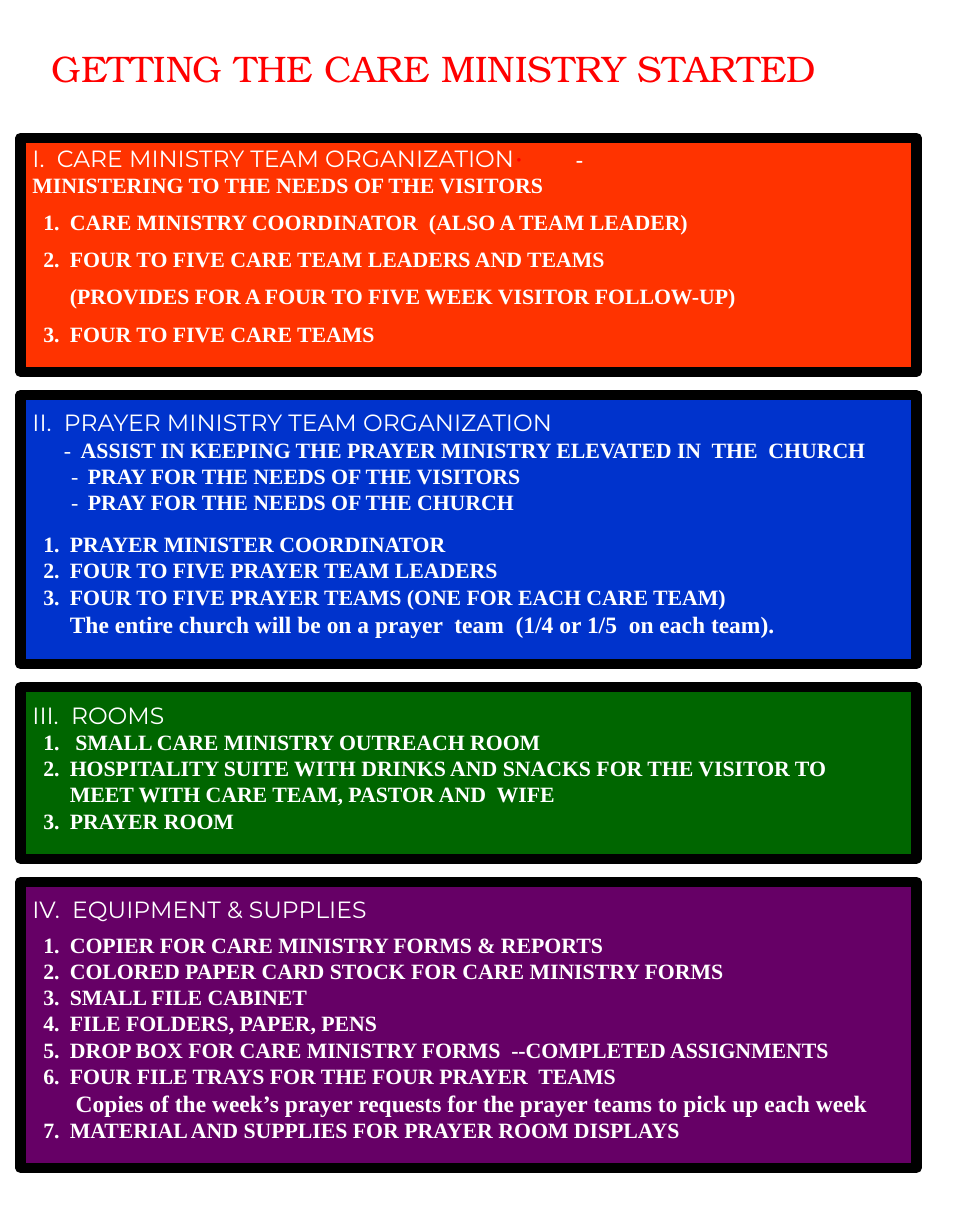
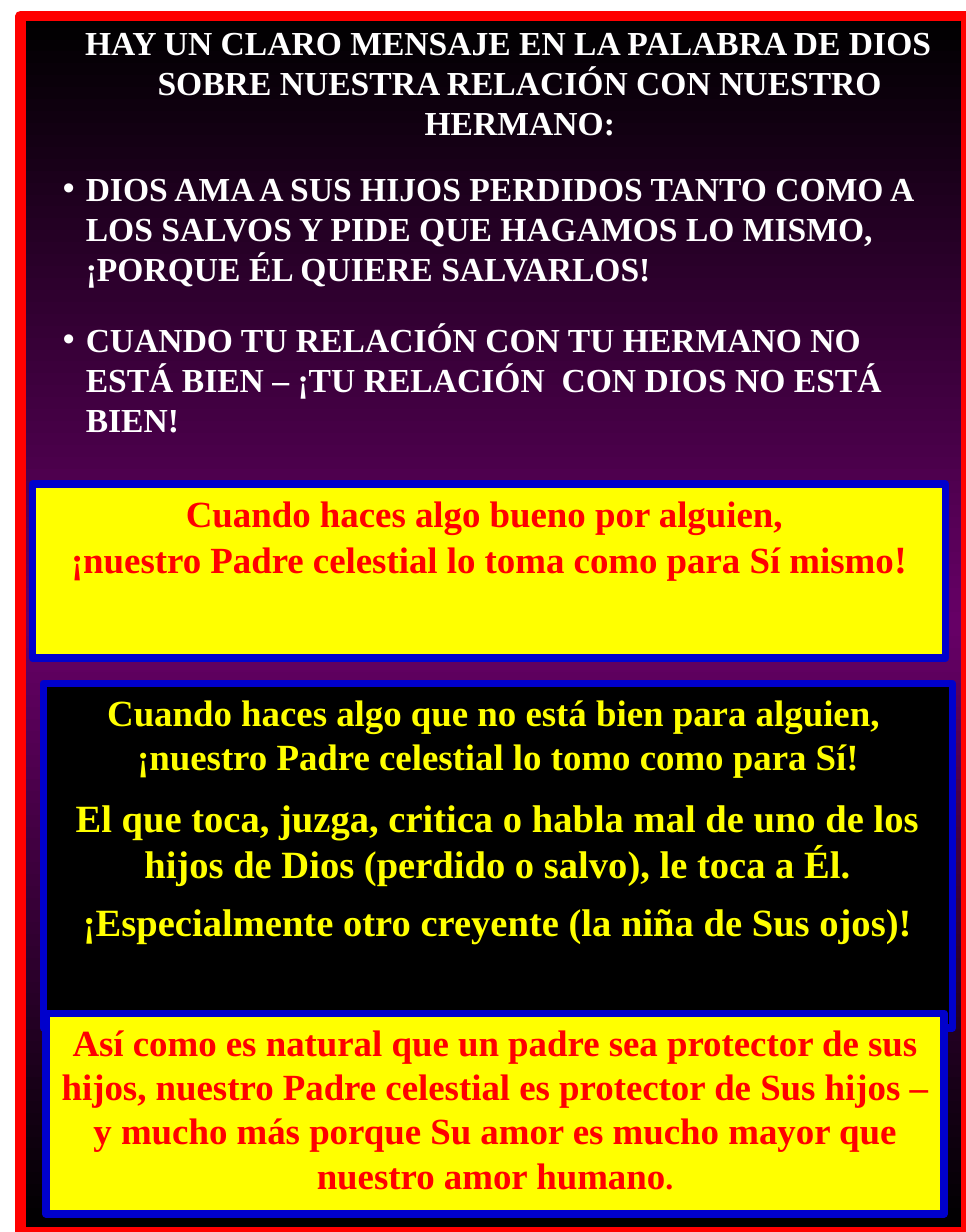
import copy
from dataclasses import dataclass

import pptx
import pptx.util
import pptx.dml.color
import pptx.enum.shapes
import pptx.enum.text
import pptx.oxml.ns
from lxml import etree

PX = 9144  # 100 px to the inch
Pt = pptx.util.Pt
RGB = pptx.dml.color.RGBColor.from_string
ALIGN = pptx.enum.text.PP_ALIGN
qn = pptx.oxml.ns.qn


@dataclass(frozen=True)
class Theme:
    white: str = "FFFFFF"
    black: str = "000000"
    red: str = "FF0000"
    orange: str = "FF3300"
    blue: str = "0033CC"
    green: str = "006600"
    purple: str = "660066"
    yellow: str = "FFFF00"
    frame: str = "0000CC"
    serif: str = "Times New Roman"
    sans: str = "Montserrat"
    display: str = "TeX Gyre Bonum"
    title: int = 22
    heading: int = 14
    item: int = 13
    message: int = 20
    quote: int = 22
    strong: int = 23
    period: int = 19


T = Theme()


def add_paragraph(tf, runs, left=0, hang=0, gap=0, align=ALIGN.LEFT, bullet=None, tabs=()):
    """Runs are (text, size, colour, font, bold); left, hang and tabs are px, gap is points."""
    p = tf.paragraphs[0]
    if p.runs:
        p = tf.add_paragraph()
    p.alignment = align
    p.space_before = Pt(gap)
    pPr = p._p.get_or_add_pPr()
    pPr.set("marL", str(left * PX))
    pPr.set("indent", str(-hang * PX))
    if bullet:
        etree.SubElement(pPr, qn("a:buChar"), char=bullet)
    else:
        etree.SubElement(pPr, qn("a:buNone"))
    if tabs:
        tab_list = etree.SubElement(pPr, qn("a:tabLst"))
        for tab in tabs:
            etree.SubElement(tab_list, qn("a:tab"), pos=str(tab * PX), algn="l")
    for text, size, color, font, bold in runs:
        if text == "\n":
            p.add_line_break()
            continue
        r = p.add_run()
        r.text = text
        r.font.size = Pt(size)
        r.font.color.rgb = RGB(color)
        r.font.name = font
        r.font.bold = bold


def add_panel(slide, box, fill, line, line_width, top_inset):
    sp = slide.shapes.add_shape(pptx.enum.shapes.MSO_SHAPE.RECTANGLE, *[n * PX for n in box])
    sp.shadow.inherit = False
    sp.fill.solid()
    sp.fill.fore_color.rgb = RGB(fill)
    sp.line.color.rgb = RGB(line)
    sp.line.width = Pt(line_width)
    tf = sp.text_frame
    tf.word_wrap = True
    tf.vertical_anchor = pptx.enum.text.MSO_ANCHOR.TOP
    tf.margin_left = tf.margin_right = 10 * PX
    tf.margin_top, tf.margin_bottom = top_inset * PX, 5 * PX
    return tf


prs = pptx.Presentation()
prs.slide_width, prs.slide_height = 800 * PX, 1020 * PX

# Slide 1: four panels of headed lists
s = prs.slides.add_slide(prs.slide_layouts[5])
title = s.shapes.title
title.left, title.top, title.width, title.height = 33 * PX, 33 * PX, 725 * PX, 47 * PX
tf = title.text_frame
tf.auto_size = pptx.enum.text.MSO_AUTO_SIZE.NONE
tf.vertical_anchor = pptx.enum.text.MSO_ANCHOR.TOP
add_paragraph(tf, [("GETTING THE CARE MINISTRY STARTED", T.title, T.red, T.display, False)])

# Line kinds: (left, hang)
NUMBER, MORE, DASH, DEEP_DASH = (31, 22), (31, 0), (40, 14), (46, 14)
item_style = (T.item, T.white, T.serif, True)
note_style = (T.heading, T.white, T.serif, True)
dash = ("-\t", T.item, T.white, T.serif, False)

# Panels: top, height, fill, top inset, heading, gap under heading, gap between items,
# items as (kind, text, style, extra gap)
panels = [
    (114, 194, T.orange, 5, "I.  CARE MINISTRY TEAM ORGANIZATION", 6.5, 6.5, [
        (NUMBER, "1.\tCARE MINISTRY COORDINATOR  (ALSO A TEAM LEADER)", item_style, 0),
        (NUMBER, "2.\tFOUR TO FIVE CARE TEAM LEADERS AND TEAMS", item_style, 0),
        (MORE, "(PROVIDES FOR A FOUR TO FIVE WEEK VISITOR FOLLOW-UP)", item_style, 0),
        (NUMBER, "3.\tFOUR TO FIVE CARE TEAMS", item_style, 0),
    ]),
    (327, 223, T.blue, 11, "II.  PRAYER MINISTRY TEAM ORGANIZATION", 0, 0, [
        (DASH, "ASSIST IN KEEPING THE PRAYER MINISTRY ELEVATED IN  THE  CHURCH", item_style, 0),
        (DEEP_DASH, "PRAY FOR THE NEEDS OF THE VISITORS", item_style, 0),
        (DEEP_DASH, "PRAY FOR THE NEEDS OF THE CHURCH", item_style, 0),
        (NUMBER, "1.\tPRAYER MINISTER COORDINATOR", item_style, 9.5),
        (NUMBER, "2.\tFOUR TO FIVE PRAYER TEAM LEADERS", item_style, 0),
        (NUMBER, "3.\tFOUR TO FIVE PRAYER TEAMS (ONE FOR EACH CARE TEAM)", item_style, 0),
        (MORE, "The entire church will be on a prayer  team  (1/4 or 1/5  on each team).",
         note_style, 0),
    ]),
    (569, 142, T.green, 11, "III.  ROOMS", 0, 0, [
        (NUMBER, "1.\t SMALL CARE MINISTRY OUTREACH ROOM", item_style, 0),
        (NUMBER, "2.\tHOSPITALITY SUITE WITH DRINKS AND SNACKS FOR THE VISITOR TO", item_style, 0),
        (MORE, "MEET WITH CARE TEAM, PASTOR AND  WIFE", item_style, 0),
        (NUMBER, "3.\tPRAYER ROOM", item_style, 0),
    ]),
    (730, 237, T.purple, 11, "IV.  EQUIPMENT & SUPPLIES", 5, 0, [
        (NUMBER, "1.\tCOPIER FOR CARE MINISTRY FORMS & REPORTS", item_style, 0),
        (NUMBER, "2.\tCOLORED PAPER CARD STOCK FOR CARE MINISTRY FORMS", item_style, 0),
        (NUMBER, "3.\tSMALL FILE CABINET", item_style, 0),
        (NUMBER, "4.\tFILE FOLDERS, PAPER, PENS", item_style, 0),
        (NUMBER, "5.\tDROP BOX FOR CARE MINISTRY FORMS  --COMPLETED ASSIGNMENTS", item_style, 0),
        (NUMBER, "6.\tFOUR FILE TRAYS FOR THE FOUR PRAYER  TEAMS", item_style, 0),
        (MORE, " Copies of the week’s prayer requests for the prayer teams to pick up each week",
         note_style, 0),
        (NUMBER, "7.\tMATERIAL AND SUPPLIES FOR PRAYER ROOM DISPLAYS", item_style, 0),
    ]),
]
for top, height, fill, inset, heading, first_gap, item_gap, items in panels:
    tf = add_panel(s, (17, top, 742, height), fill, T.black, 6, inset)
    runs = [(heading, T.heading, T.white, T.sans, False)]
    if fill == T.orange:
        runs += [("\t·", T.item, T.red, T.serif, True),
                 ("\t-", *item_style),
                 ("\n", *item_style),
                 ("MINISTERING TO THE NEEDS OF THE VISITORS", *item_style)]
    add_paragraph(tf, runs, tabs=(672, 698) if fill == T.orange else ())
    for i, (kind, text, style, extra) in enumerate(items):
        runs = [(text, *style)]
        if kind in (DASH, DEEP_DASH):
            runs.insert(0, dash)
        add_paragraph(tf, runs, *kind, gap=extra + (item_gap if i else first_gap))

# Slide 2: message on a gradient, with three framed quotes
s = prs.slides.add_slide(prs.slide_layouts[1])
s.shapes.title._element.getparent().remove(s.shapes.title._element)
body = s.placeholders[1]
body.left, body.top, body.width, body.height = 17 * PX, 13 * PX, 783 * PX, 1007 * PX
body.line.color.rgb = RGB(T.red)
body.line.width = Pt(6)
body.fill.gradient()
body.fill.gradient_angle = 270
stop_list = body._element.spPr.find(qn("a:gradFill")).find(qn("a:gsLst"))
stop_list.insert(1, copy.deepcopy(stop_list[0]))
for stop, position, color in zip(body.fill.gradient_stops, (0, 0.5, 1),
                                 (T.black, T.purple, T.black)):
    stop.position = position
    stop.color.rgb = RGB(color)

tf = body.text_frame
tf.auto_size = pptx.enum.text.MSO_AUTO_SIZE.NONE
for text, align, bullet, gap in [
    ("HAY UN CLARO MENSAJE EN LA PALABRA DE DIOS SOBRE NUESTRA RELACIÓN CON NUESTRO HERMANO:",
     ALIGN.CENTER, None, 4),
    ("DIOS AMA A SUS HIJOS PERDIDOS TANTO COMO A LOS SALVOS Y PIDE QUE HAGAMOS LO MISMO, "
     "¡PORQUE ÉL QUIERE SALVARLOS!", ALIGN.LEFT, "•", 15),
    ("CUANDO TU RELACIÓN CON TU HERMANO NO ESTÁ BIEN – ¡TU RELACIÓN  CON DIOS NO ESTÁ BIEN!",
     ALIGN.LEFT, "•", 18),
]:
    add_paragraph(tf, [(text, T.message, T.white, T.serif, True)], 44, 19, gap, align, bullet)

# Quotes: box, fill, text colour, paragraphs as (gap, runs of text and size)
quotes = [
    ((27, 401, 756, 144), T.yellow, T.red, [
        (0, [("Cuando haces algo bueno por alguien, ", T.quote)]),
        (0, [("¡nuestro Padre celestial lo toma como para Sí mismo", T.quote), ("!", T.strong)]),
    ]),
    ((36, 566, 753, 285), T.black, T.yellow, [
        (0, [("Cuando haces algo que no está bien para alguien, ", T.quote)]),
        (0, [("¡nuestro Padre celestial lo tomo como para Sí!", T.quote)]),
        (9.5, [("El que toca, juzga, critica o habla mal de uno de los hijos de Dios "
                "(perdido o salvo), le toca a Él.", T.strong)]),
        (7, [("¡Especialmente otro creyente (la niña de Sus ojos)!", T.strong)]),
    ]),
    ((38, 839, 744, 166), T.yellow, T.red, [
        (0, [("Así como es natural que un padre sea protector de sus hijos, nuestro Padre "
              "celestial es protector de Sus hijos – y mucho más porque Su amor es mucho "
              "mayor que nuestro amor humano", T.quote), (".", T.period)]),
    ]),
]
for box, fill, color, paragraphs in quotes:
    tf = add_panel(s, box, fill, T.frame, 4.5, 5)
    for gap, runs in paragraphs:
        add_paragraph(tf, [(text, size, color, T.serif, True) for text, size in runs],
                      gap=gap, align=ALIGN.CENTER)

prs.save("out.pptx")
